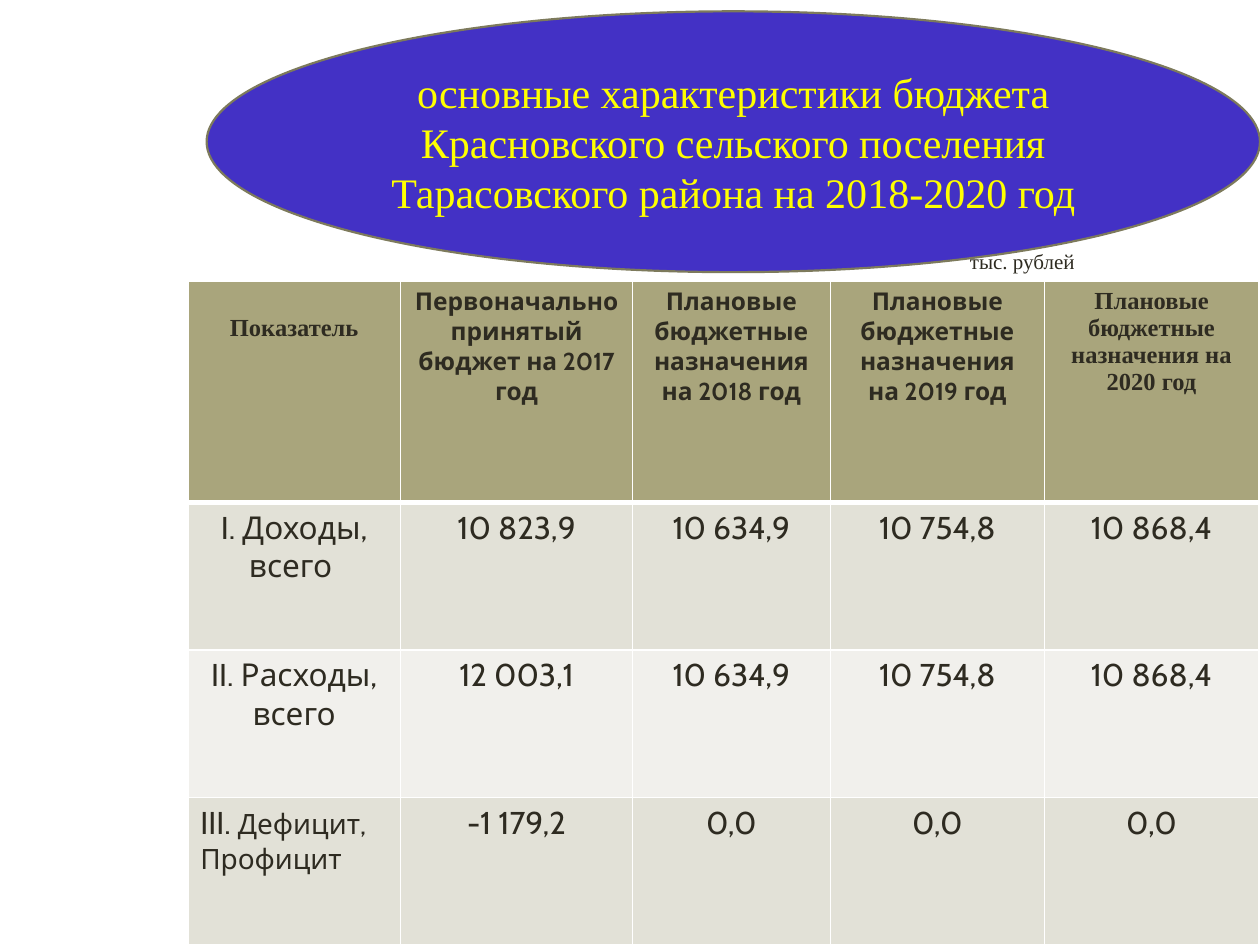
from lxml import etree
from pptx import Presentation
from pptx.dml.color import RGBColor
from pptx.enum import shapes, text
from pptx.oxml import ns
from pptx.util import Inches, Pt

SERIF, SANS = "Times New Roman", "Cabin"
INK = "2E2B21"


def rgb(value):
    return RGBColor.from_string(value)


def add_run(paragraph, words, size, font, color=INK, bold=False):
    run = paragraph.add_run()
    run.text = words
    run.font.size = Pt(size)
    run.font.name = font
    run.font.bold = bold
    run.font.color.rgb = rgb(color)


deck = Presentation()
deck.slide_width, deck.slide_height = Inches(10), Inches(7.5)
slide = deck.slides.add_slide(deck.slide_layouts[6])

# Budget table: each cell is a list of paragraphs, each a list of (words, size)
years = [2018, 2019, 2020]
headings = ["Показатель", "Первоначально принятый бюджет на 2017 год"]
headings += [f"Плановые бюджетные назначения на {year} год" for year in years]
labels = [
    [[("I. Доходы,", 18)], [("всего ", 18)]],
    [[("II. Расходы, всего", 18)]],
    [[("III. ", 18), ("Дефицит,", 16)], [("Профицит", 16)]],
]
amounts = [
    ["10 823,9", "10 634,9", "10 754,8", "10 868,4"],
    ["12 003,1", "10 634,9", "10 754,8", "10 868,4"],
    ["-1 179,2", "0,0", "0,0", "0,0"],
]
rows = [[[[(heading, 14)]] for heading in headings]]
for label, values in zip(labels, amounts):
    rows.append([label] + [[[(value, 18)]] for value in values])

widths = [1.69, 1.84, 1.57, 1.7, 1.7]
heights = [1.76, 1.17, 1.17, 1.17]
row_fills = ["A9A57C", "E2E1D7", "F1F0EC", "E2E1D7"]
budget = slide.shapes.add_table(
    len(rows), len(widths), Inches(1.49), Inches(2.23), Inches(8.51), Inches(5.27)
).table
for column, width in zip(budget.columns, widths):
    column.width = Inches(width)
for row, height in zip(budget.rows, heights):
    row.height = Inches(height)

for r, cells in enumerate(rows):
    for c, paragraphs in enumerate(cells):
        cell = budget.cell(r, c)
        header = r == 0
        font = SERIF if header and c in (0, 4) else SANS
        for i, runs in enumerate(paragraphs):
            frame = cell.text_frame
            paragraph = frame.add_paragraph() if i else frame.paragraphs[0]
            left = r == 3 and c == 0
            paragraph.alignment = text.PP_ALIGN.LEFT if left else text.PP_ALIGN.CENTER
            if r == 1 and c == 0:  # hanging indent
                properties = paragraph._p.get_or_add_pPr()
                properties.set("marL", str(Inches(0.38)))
                properties.set("indent", str(-Inches(0.38)))
            for words, size in runs:
                add_run(paragraph, words, size, font, bold=header)

        # White rules, thicker next to the header row
        borders = cell._tc.get_or_add_tcPr()
        for side in ("L", "R", "T", "B"):
            thick = (header and side == "B") or (r == 1 and side == "T")
            line = etree.SubElement(borders, ns.qn(f"a:ln{side}"), w=str(Pt(3 if thick else 1)))
            fill = etree.SubElement(line, ns.qn("a:solidFill"))
            etree.SubElement(fill, ns.qn("a:srgbClr"), val="FFFFFF")
        cell.fill.solid()
        cell.fill.fore_color.rgb = rgb(row_fills[r])

# The first heading sits one line lower
budget.cell(0, 0).margin_top = Inches(0.27)

# Title ellipse
title = slide.shapes.add_shape(
    shapes.MSO_SHAPE.OVAL, Inches(1.64), Inches(0.09), Inches(8.36), Inches(2.07)
)
title.shadow.inherit = False
title.fill.solid()
title.fill.fore_color.rgb = rgb("4331C5")
title.line.color.rgb = rgb("7D7A5C")
title.line.width = Pt(1.25)
title.text_frame.word_wrap = True
title.text_frame.vertical_anchor = text.MSO_ANCHOR.MIDDLE
title_line = title.text_frame.paragraphs[0]
title_line.alignment = text.PP_ALIGN.CENTER
add_run(
    title_line,
    "основные характеристики бюджета Красновского сельского поселения "
    "Тарасовского района на 2018-2020 год",
    24, SERIF, "FFFF00",
)

# Unit of measure
unit = slide.shapes.add_textbox(Inches(7.6), Inches(1.92), Inches(1.04), Inches(0.3))
unit.text_frame.word_wrap = False
unit.text_frame.auto_size = text.MSO_AUTO_SIZE.SHAPE_TO_FIT_TEXT
add_run(unit.text_frame.paragraphs[0], "тыс. рублей", 12, SERIF)

deck.save("out.pptx")
